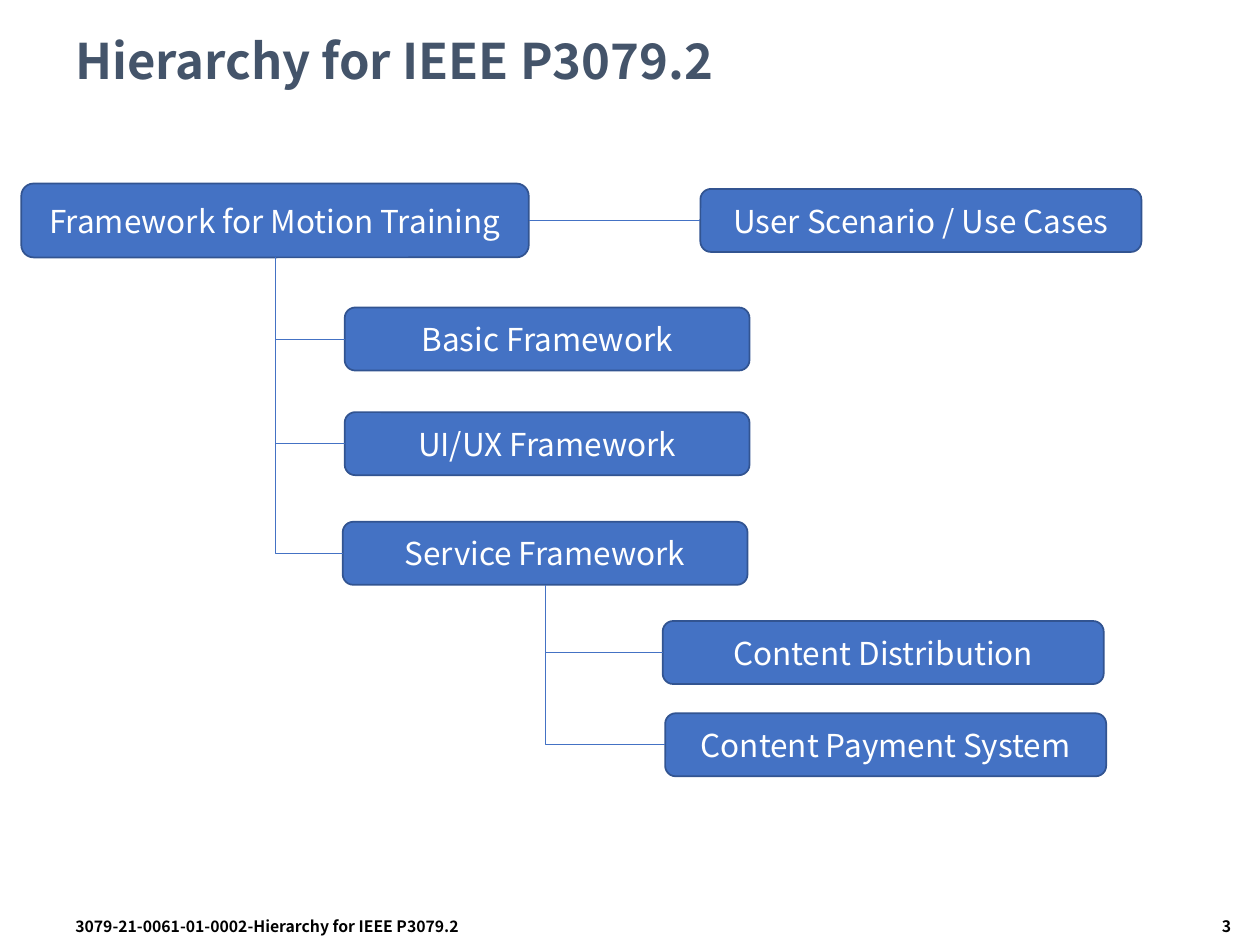
from dataclasses import dataclass

from lxml.etree import SubElement
from pptx import Presentation
from pptx.dml.color import RGBColor
from pptx.enum.shapes import MSO_CONNECTOR as Link, MSO_SHAPE as Shape
from pptx.enum.text import MSO_ANCHOR as Anchor, PP_ALIGN as Align
from pptx.oxml.ns import qn
from pptx.util import Cm, Pt


@dataclass(frozen=True)
class Theme:
    font: str = "Noto Sans CJK KR"
    title: RGBColor = RGBColor(0x44, 0x54, 0x6A)
    footer: RGBColor = RGBColor(0, 0, 0)
    label: RGBColor = RGBColor(0xFF, 0xFF, 0xFF)
    fill: RGBColor = RGBColor(0x44, 0x72, 0xC4)
    outline: RGBColor = RGBColor(0x32, 0x54, 0x91)
    title_size: Pt = Pt(28)
    label_size: Pt = Pt(18)
    footer_size: Pt = Pt(9)
    outline_width: Pt = Pt(1)
    link_width: Pt = Pt(0.5)


theme = Theme()


def write(box, text, size, color, align, anchor, bold=False):
    box.text_frame.word_wrap = True
    box.text_frame.vertical_anchor = anchor
    para = box.text_frame.paragraphs[0]
    para.alignment = align
    span = para.add_run()
    span.text = text
    span.font.name = theme.font
    span.font.size = size
    span.font.bold = bold
    span.font.color.rgb = color
    return para


def connect(page, kind, parent, parent_site, child):
    link = page.shapes.add_connector(kind, 0, 0, 0, 0)
    link.begin_connect(parent, parent_site)
    link.end_connect(child, 1)
    link.line.color.rgb = theme.fill
    link.line.width = theme.link_width
    SubElement(link._element.spPr, qn("a:effectLst"))
    return link


deck = Presentation()
deck.slide_width, deck.slide_height = Cm(25.4), Cm(19.05)
page = deck.slides.add_slide(deck.slide_layouts[5])

title = page.shapes.title
title.left, title.top, title.width, title.height = Cm(1.27), Cm(0.43), Cm(22.86), Cm(1.7)
heading = write(title, "Hierarchy for IEEE P3079.2", theme.title_size, theme.title,
                Align.LEFT, Anchor.MIDDLE, bold=True)
heading.line_spacing = 0.9

footers = [
    ("3079-21-0061-01-0002-Hierarchy for IEEE P3079.2", 1.27, 13.54, Align.LEFT),
    ("3", 20.96, 4.11, Align.RIGHT),
]
for text, left, width, align in footers:
    footer = page.shapes.add_textbox(Cm(left), Cm(18.36), Cm(width), Cm(0.69))
    write(footer, text, theme.footer_size, theme.footer, align, Anchor.TOP, bold=True)

nodes = [
    ("Framework for Motion Training", 0.43, 3.7, 10.23, 1.49),
    ("User Scenario / Use Cases", 14.12, 3.81, 8.89, 1.27),
    ("Basic Framework", 6.95, 6.2, 8.16, 1.27),
    ("UI/UX Framework", 6.95, 8.31, 8.16, 1.27),
    ("Service Framework", 6.91, 10.52, 8.16, 1.27),
    ("Content Distribution", 13.36, 12.52, 8.89, 1.27),
    ("Content Payment System", 13.41, 14.38, 8.89, 1.27),
]
boxes = {}
for text, *bounds in nodes:
    box = page.shapes.add_shape(Shape.ROUNDED_RECTANGLE, *map(Cm, bounds))
    box.shadow.inherit = False
    box.fill.solid()
    box.fill.fore_color.rgb = theme.fill
    box.line.color.rgb = theme.outline
    box.line.width = theme.outline_width
    write(box, text, theme.label_size, theme.label, Align.CENTER, Anchor.MIDDLE)
    boxes[text] = box

connect(page, Link.STRAIGHT, boxes["Framework for Motion Training"], 3,
        boxes["User Scenario / Use Cases"])

branches = {
    "Framework for Motion Training": ["Basic Framework", "UI/UX Framework", "Service Framework"],
    "Service Framework": ["Content Distribution", "Content Payment System"],
}
for parent, children in branches.items():
    for child in children:
        link = connect(page, Link.ELBOW, boxes[parent], 2, boxes[child])
        run, drop = link.width, link.height
        shift = (run - drop) // 2
        link.left, link.top = link.left + shift, link.top - shift
        link.width, link.height = drop, run
        properties = link._element.spPr
        properties.find(qn("a:prstGeom")).set("prst", "bentConnector2")
        transform = properties.find(qn("a:xfrm"))
        transform.set("rot", "16200000")
        transform.set("flipH", "1")

deck.save("out.pptx")
